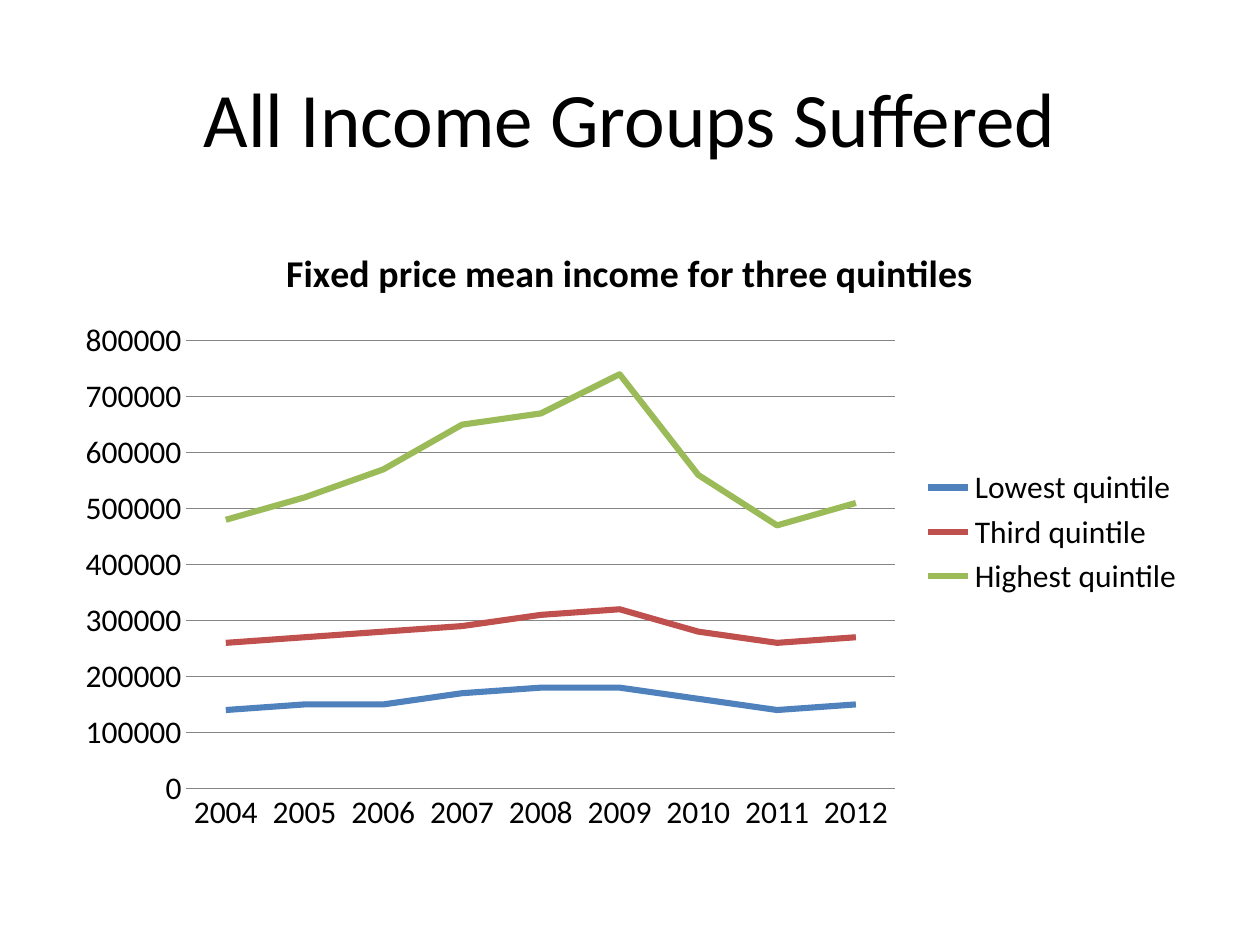
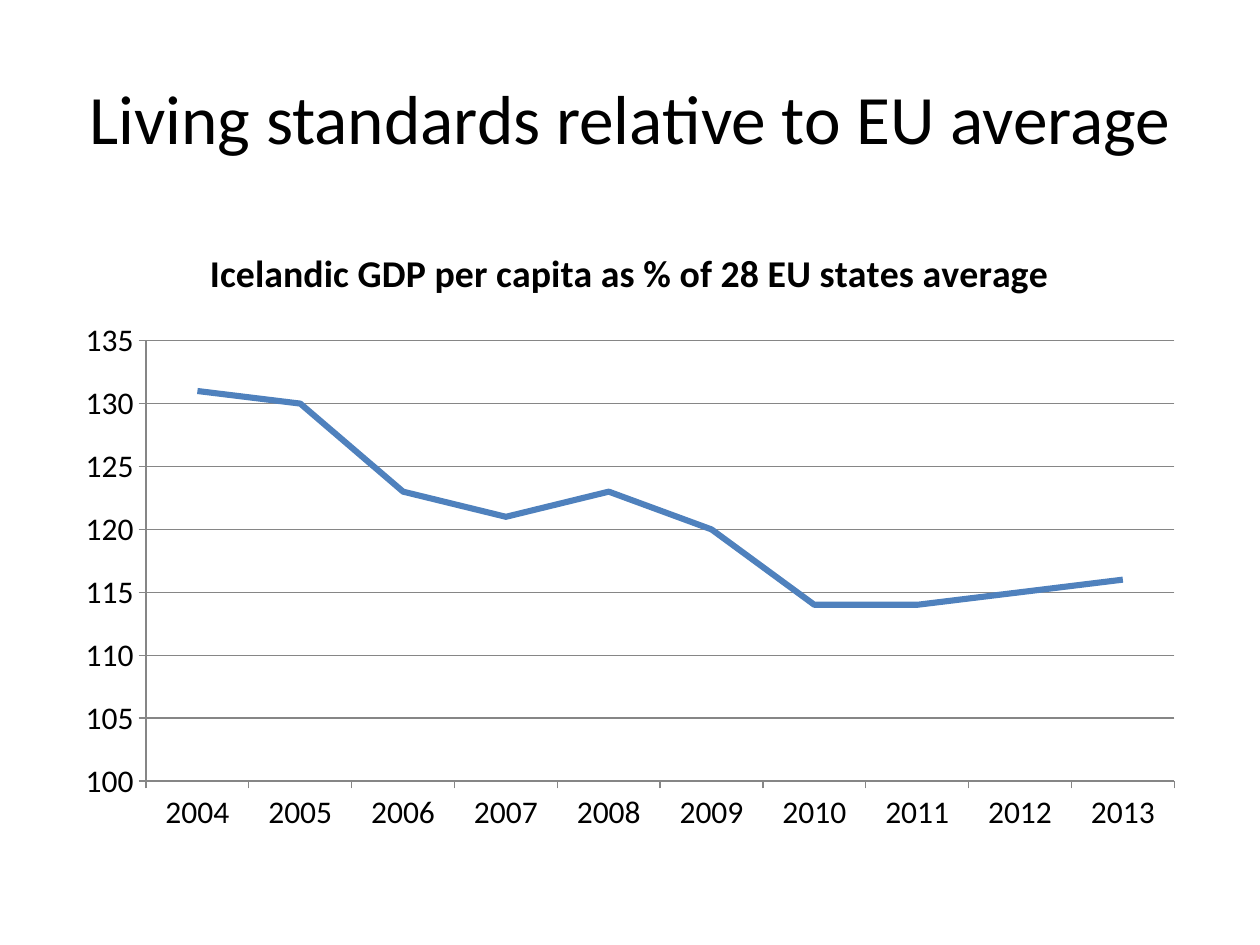
from pptx import Presentation
from pptx import util as u
from pptx.chart.data import CategoryChartData
from pptx.dml.color import RGBColor
from pptx.enum import chart as c, text

# Shared look
PX_PER_INCH = 126
FONT = "Calibri"
BLACK, GRID = "000000", "868686"
BLUE, RED, GREEN = "4F81BD", "C0504D", "9BBB59"
TITLE_BOX = (63, 38, 1134, 157)
CHART_BOX = (63, 220, 1134, 624)
TITLE_ONLY = 5


def px(length):
    return u.Emu(round(length * 914400 / PX_PER_INCH))


def color(value):
    return RGBColor.from_string(value)


def style_font(font, size, bold=False):
    font.name = FONT
    font.size = u.Pt(size)
    font.bold = bold
    font.color.rgb = color(BLACK)


def style_line(line, value, width):
    line.color.rgb = color(value)
    line.width = u.Pt(width)


def add_titled_slide(presentation, title, size):
    slide = presentation.slides.add_slide(presentation.slide_layouts[TITLE_ONLY])
    shape = slide.shapes.title
    shape.left, shape.top, shape.width, shape.height = map(px, TITLE_BOX)
    frame = shape.text_frame
    frame.text = title
    frame.word_wrap = True
    frame.vertical_anchor = text.MSO_ANCHOR.MIDDLE
    paragraph = frame.paragraphs[0]
    paragraph.alignment = text.PP_ALIGN.CENTER
    style_font(paragraph.runs[0].font, size)
    return slide


def style_axes(chart, low, high, step, ticks):
    mark = c.XL_TICK_MARK.OUTSIDE if ticks else c.XL_TICK_MARK.NONE
    for axis in (chart.category_axis, chart.value_axis):
        axis.major_tick_mark = mark
        axis.minor_tick_mark = c.XL_TICK_MARK.NONE
        style_font(axis.tick_labels.font, 18)
        style_line(axis.format.line, GRID, 0.75)
    axis = chart.value_axis
    axis.minimum_scale, axis.maximum_scale, axis.major_unit = low, high, step
    axis.has_major_gridlines = True
    style_line(axis.major_gridlines.format.line, GRID, 0.75)
    if not ticks:
        axis.format.line.fill.background()


def add_line_chart(slide, title, years, series, scale, ticks=False, legend=False):
    """Series is a list of (name, colour, values); scale is (low, high, step)."""
    data = CategoryChartData(number_format="General")
    data.categories = [str(year) for year in years]
    for name, _, values in series:
        data.add_series(name, values)
    chart = slide.shapes.add_chart(
        c.XL_CHART_TYPE.LINE, *map(px, CHART_BOX), data).chart
    style_font(chart.font, 18)

    chart.has_title = True
    frame = chart.chart_title.text_frame
    frame.text = title
    style_font(frame.paragraphs[0].runs[0].font, 21.6, bold=True)
    chart.chart_title.include_in_layout = False

    chart.has_legend = legend
    if legend:
        chart.legend.position = c.XL_LEGEND_POSITION.RIGHT
        chart.legend.include_in_layout = False
        style_font(chart.legend.font, 18)

    style_axes(chart, *scale, ticks)
    plot = chart.plots[0]
    plot.vary_by_categories = False
    for line, (_, value, _) in zip(plot.series, series):
        line.smooth = False
        line.marker.style = c.XL_MARKER_STYLE.NONE
        style_line(line.format.line, value, 3.5)


def main():
    presentation = Presentation()
    presentation.slide_width, presentation.slide_height = px(1260), px(945)

    # Income by quintile
    slide = add_titled_slide(presentation, "All Income Groups Suffered", 44)
    quintiles = [
        ("Lowest quintile", BLUE,
         [140000, 150000, 150000, 170000, 180000, 180000, 160000, 140000, 150000]),
        ("Third quintile", RED,
         [260000, 270000, 280000, 290000, 310000, 320000, 280000, 260000, 270000]),
        ("Highest quintile", GREEN,
         [480000, 520000, 570000, 650000, 670000, 740000, 560000, 470000, 510000]),
    ]
    add_line_chart(slide, "Fixed price mean income for three quintiles",
                   range(2004, 2013), quintiles, (0, 800000, 100000), legend=True)

    # GDP against the EU average
    slide = add_titled_slide(
        presentation, "Living standards relative to EU average", 39.6)
    gdp_title = "Icelandic GDP per capita as % of 28 EU states average"
    gdp = [(gdp_title, BLUE, [131, 130, 123, 121, 123, 120, 114, 114, 115, 116])]
    add_line_chart(slide, gdp_title, range(2004, 2014), gdp, (100, 135, 5), ticks=True)

    presentation.save("out.pptx")


if __name__ == "__main__":
    main()
